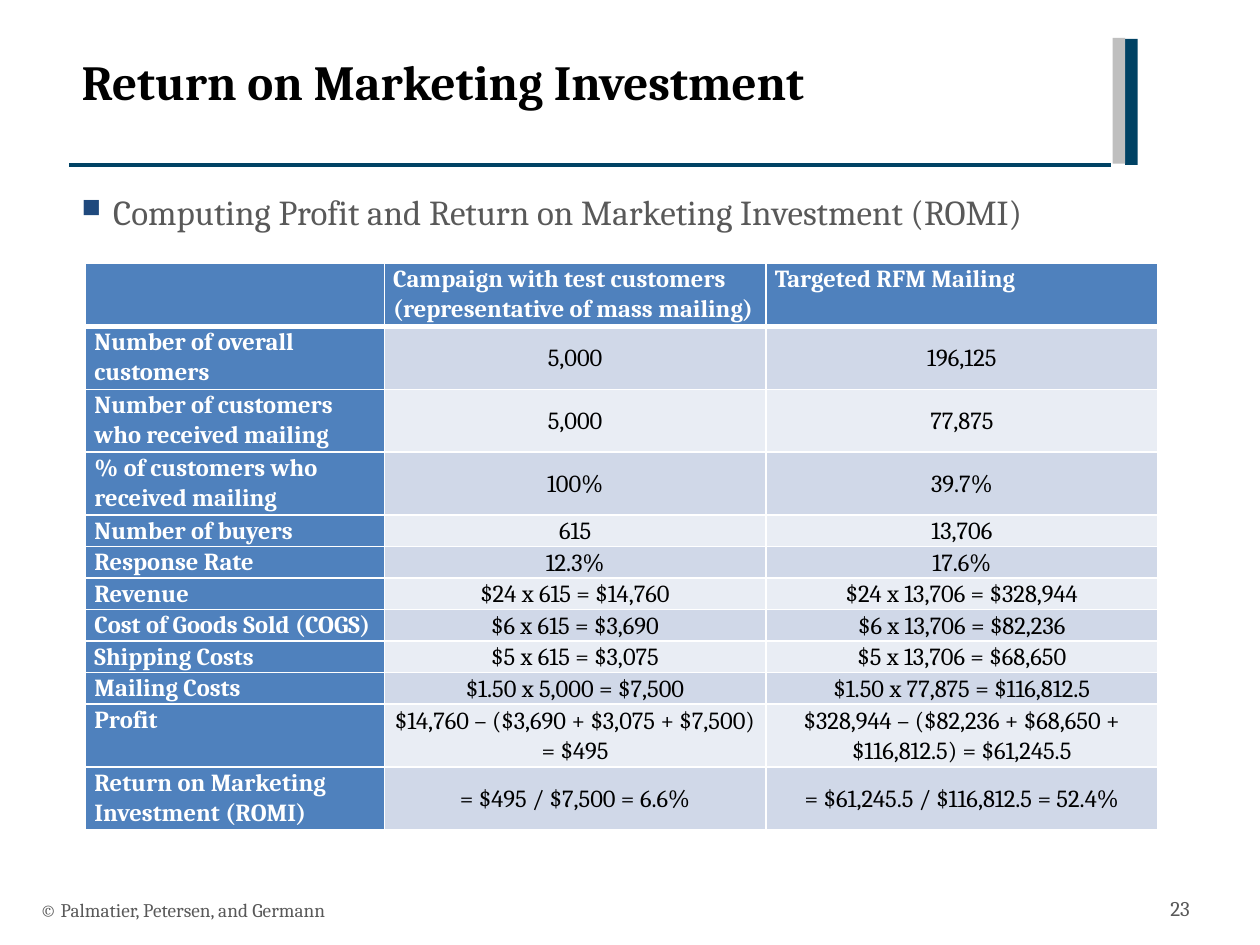
from pptx import Presentation
from pptx.dml.color import RGBColor
from pptx.enum.shapes import MSO_CONNECTOR, MSO_SHAPE
from pptx.enum.text import MSO_ANCHOR, PP_ALIGN
from pptx.oxml import parse_xml
from pptx.oxml.ns import nsdecls
from pptx.util import Inches, Pt

HUES = {
    "navy": "004264", "silver": "BFBFBF", "black": "000000",
    "white": "FFFFFF", "gray": "595959", "mark": "1F497D",
    "head": "4F81BD", "odd": "D0D8E8", "even": "E9EDF4",
}

HEAD = ["", "Campaign with test customers (representative of mass mailing)",
        "Targeted RFM Mailing"]
ROWS = [
    ["Number of overall customers", "5,000", "196,125"],
    ["Number of customers who received mailing", "5,000", "77,875"],
    ["% of customers who received mailing", "100%", "39.7%"],
    ["Number of buyers", "615", "13,706"],
    ["Response Rate", "12.3%", "17.6%"],
    ["Revenue", "$24 x 615 = $14,760", "$24 x 13,706 = $328,944"],
    ["Cost of Goods Sold (COGS)", "$6 x 615 = $3,690", "$6 x 13,706 = $82,236"],
    ["Shipping Costs", "$5 x 615 = $3,075", "$5 x 13,706 = $68,650"],
    ["Mailing Costs", "$1.50 x 5,000 = $7,500", "$1.50 x 77,875 = $116,812.5"],
    ["Profit", "$14,760 – ($3,690 + $3,075 + $7,500) = $495",
     "$328,944 – ($82,236 + $68,650 + $116,812.5) = $61,245.5"],
    ["Return on Marketing Investment (ROMI)", "= $495 / $7,500 = 6.6%",
     "= $61,245.5 / $116,812.5 = 52.4%"],
]
WIDTHS = [2.37, 3.03, 3.11]
TALL = {0, 1, 2, 3, 10, 11}


class Deck:
    font = "Cambria"

    def __init__(self, slide):
        self.slide = slide

    def hue(self, name):
        return RGBColor.from_string(HUES[name])

    def run(self, para, text, size, hue, bold=False):
        run = para.add_run()
        run.text = text
        run.font.name = self.font
        run.font.size = Pt(size)
        run.font.bold = bold
        run.font.color.rgb = self.hue(hue)

    def text(self, box, text, size, hue, bold=False, anchor=MSO_ANCHOR.TOP):
        frame = self.slide.shapes.add_textbox(*map(Inches, box)).text_frame
        frame.word_wrap = True
        frame.vertical_anchor = anchor
        para = frame.paragraphs[0]
        self.run(para, text, size, hue, bold)
        return para

    def bullet(self, box, text, size, hue):
        para = self.text(box, text, size, hue)
        props = para._p.get_or_add_pPr()
        props.set("marL", str(Inches(0.25)))
        props.set("indent", str(-Inches(0.25)))
        for tag in (f'<a:buClr {nsdecls("a")}><a:srgbClr val="{HUES["mark"]}"/></a:buClr>',
                    f'<a:buSzPct {nsdecls("a")} val="75000"/>',
                    f'<a:buChar {nsdecls("a")} char="■"/>'):
            props.append(parse_xml(tag))

    def bar(self, box, hue):
        bar = self.slide.shapes.add_shape(MSO_SHAPE.RECTANGLE, *map(Inches, box))
        bar.shadow.inherit = False
        bar.fill.solid()
        bar.fill.fore_color.rgb = self.hue(hue)
        bar.line.fill.background()

    def line(self, ends, hue, width):
        line = self.slide.shapes.add_connector(MSO_CONNECTOR.STRAIGHT, *map(Inches, ends))
        line.line.color.rgb = self.hue(hue)
        line.line.width = Pt(width)
        line._element.spPr.append(parse_xml(f'<a:effectLst {nsdecls("a")}/>'))

    def edges(self, cell, sides):
        props = cell._tc.get_or_add_tcPr()
        for spot, (side, width) in enumerate(sides.items()):
            props.insert(spot, parse_xml(
                f'<a:ln{side} {nsdecls("a")} w="{Pt(width)}"><a:solidFill>'
                f'<a:srgbClr val="{HUES["white"]}"/></a:solidFill></a:ln{side}>'))

    def cell(self, cell, text, row, col):
        label = row == 0 or col == 0
        cell.margin_left = cell.margin_right = Inches(0.07)
        cell.margin_top = cell.margin_bottom = 0
        cell.vertical_anchor = MSO_ANCHOR.TOP if label else MSO_ANCHOR.MIDDLE
        cell.fill.solid()
        cell.fill.fore_color.rgb = self.hue(
            "head" if label else "odd" if row % 2 else "even")
        self.edges(cell, {"L": 1, "R": 1, "T": 3 if row == 1 else 1,
                          "B": 3 if row == 0 else 1})
        if text:
            para = cell.text_frame.paragraphs[0]
            para.line_spacing = 1.07
            para.alignment = PP_ALIGN.LEFT if label else PP_ALIGN.CENTER
            self.run(para, text, 14, "white" if label else "black", label)

    def table(self, left, top, rows, widths, tall, step):
        highs = [step * (2 if i in tall else 1) for i in range(len(rows))]
        box = left, top, sum(widths), sum(highs)
        grid = self.slide.shapes.add_table(
            len(rows), len(widths), *map(Inches, box)).table
        for col, width in zip(grid.columns, widths):
            col.width = Inches(width)
        for i, (texts, high) in enumerate(zip(rows, highs)):
            grid.rows[i].height = Inches(high)
            for j, text in enumerate(texts):
                self.cell(grid.cell(i, j), text, i, j)


def main():
    show = Presentation()
    show.slide_width, show.slide_height = Inches(10), Inches(7.5)
    deck = Deck(show.slides.add_slide(show.slide_layouts[6]))
    deck.line((0.55, 1.31, 8.82, 1.31), "navy", 2)
    deck.bar((8.93, 0.31, 0.1, 1), "navy")
    deck.bar((8.83, 0.3, 0.1, 1), "silver")
    deck.text((0.55, 0.36, 8.18, 0.88), "Return on Marketing Investment",
              28, "black", True)
    deck.bullet((0.55, 1.46, 9.25, 5.41),
                "Computing Profit and Return on Marketing Investment (ROMI)", 20, "gray")
    deck.text((0.22, 7.02, 6.7, 0.4), "© Palmatier, Petersen, and Germann",
              11, "gray", anchor=MSO_ANCHOR.MIDDLE)
    deck.text((9.19, 7.06, 0.61, 0.4), "23", 12, "gray")
    deck.table(0.68, 2.09, [HEAD] + ROWS, WIDTHS, TALL, 0.24)
    show.save("out.pptx")


if __name__ == "__main__":
    main()
